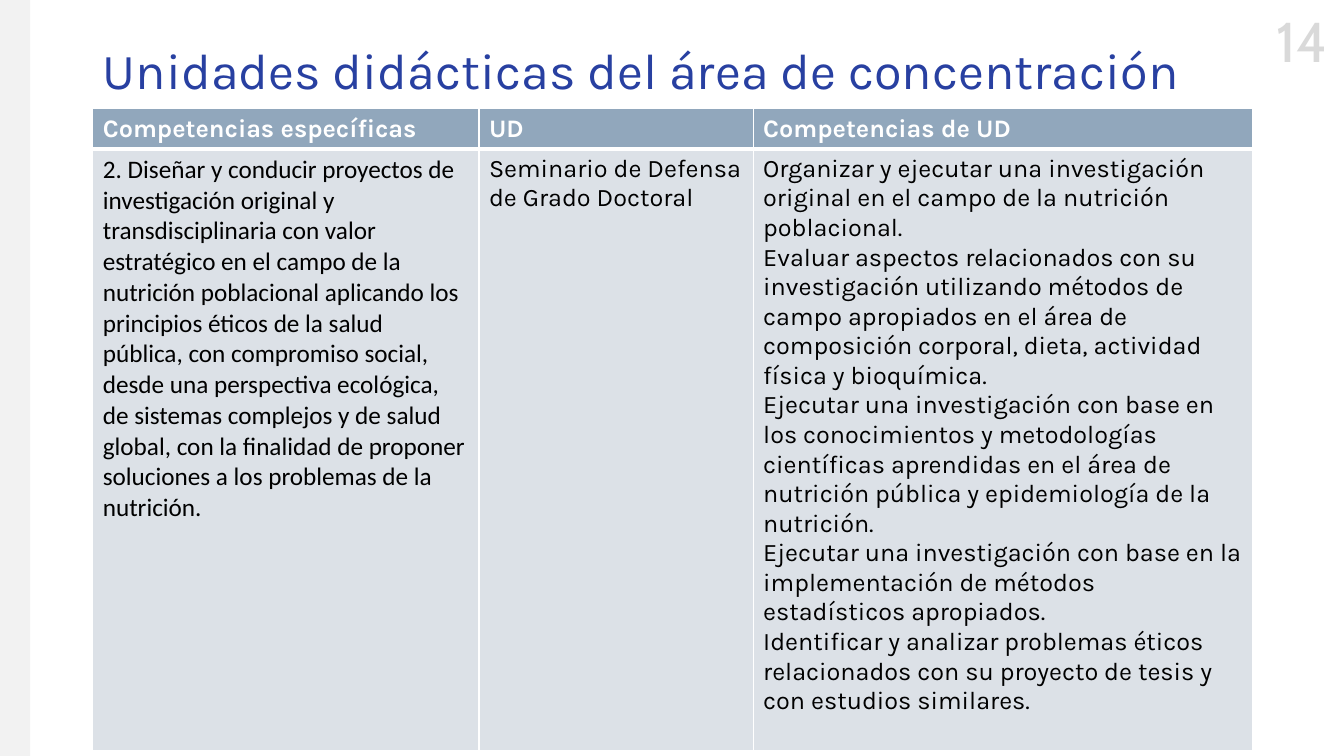
from dataclasses import dataclass

from lxml.etree import SubElement
from pptx import Presentation
from pptx.dml.color import RGBColor
from pptx.enum.shapes import MSO_SHAPE
from pptx.enum.text import MSO_ANCHOR, MSO_AUTO_SIZE, PP_ALIGN
from pptx.oxml.ns import qn
from pptx.util import Inches, Pt


@dataclass
class Column:
    heading: str
    width: float
    paragraphs: list[str]
    font: str = "Karla"


COLUMNS = [
    Column("Competencias específicas", 3.83, [
        "2. Diseñar y conducir proyectos de investigación original y "
        "transdisciplinaria con valor estratégico en el campo de la nutrición "
        "poblacional aplicando los principios éticos de la salud pública, con "
        "compromiso social, desde una perspectiva ecológica, de sistemas complejos "
        "y de salud global, con la finalidad de proponer soluciones a los problemas "
        "de la nutrición.",
    ], "Calibri"),
    Column("UD", 2.72, ["Seminario de Defensa de Grado Doctoral"]),
    Column("Competencias de UD", 4.95, [
        "Organizar y ejecutar una investigación original en el campo de la "
        "nutrición poblacional.",
        "Evaluar aspectos relacionados con su investigación utilizando métodos de "
        "campo apropiados en el área de composición corporal, dieta, actividad "
        "física y bioquímica.",
        "Ejecutar una investigación con base en los conocimientos y metodologías "
        "científicas aprendidas en el área de nutrición pública y epidemiología de "
        "la nutrición.",
        "Ejecutar una investigación con base en la implementación de métodos "
        "estadísticos apropiados.",
        "Identificar y analizar problemas éticos relacionados con su proyecto de "
        "tesis y con estudios similares.",
    ]),
]
ROW_HEIGHTS = [0.38, 5.97]


def paint(fill, color: str) -> None:
    fill.solid()
    fill.fore_color.rgb = RGBColor.from_string(color)


def write(frame, paragraphs: list[str], *, font: str, size: float, color: str,
          bold: bool = False, align=PP_ALIGN.LEFT, line_spacing: float = 1.0) -> None:
    for index, text in enumerate(paragraphs):
        paragraph = frame.add_paragraph() if index else frame.paragraphs[0]
        paragraph.alignment = align
        paragraph.line_spacing = line_spacing
        run = paragraph.add_run()
        run.text = text
        run.font.name = font
        run.font.size = Pt(size)
        run.font.bold = bold
        run.font.color.rgb = RGBColor.from_string(color)


def format_cell(cell, fill: str, top: float, bottom: float) -> None:
    """Give the cell white borders, then its fill, in schema order."""
    properties = cell._tc.get_or_add_tcPr()
    for side, width in {"lnL": 1, "lnR": 1, "lnT": top, "lnB": bottom}.items():
        line = SubElement(properties, qn(f"a:{side}"), w=str(Pt(width)))
        solid = SubElement(line, qn("a:solidFill"))
        SubElement(solid, qn("a:srgbClr"), val="FFFFFF")
    paint(cell.fill, fill)


def add_side_band(slide) -> None:
    band = slide.shapes.add_shape(MSO_SHAPE.RECTANGLE, 0, 0, Inches(0.3), Inches(7.5))
    band.shadow.inherit = False
    paint(band.fill, "F2F2F2")
    band.line.fill.background()


def add_page_number(slide) -> None:
    number = slide.shapes.add_textbox(Inches(12.54), Inches(0.02), Inches(0.75), Inches(0.77))
    number.text_frame.word_wrap = False
    number.text_frame.auto_size = MSO_AUTO_SIZE.SHAPE_TO_FIT_TEXT
    write(number.text_frame, ["14"], font="Cabin", size=40, color="D9D9D9",
          align=PP_ALIGN.CENTER)


def fill_title(slide) -> None:
    title = slide.shapes.title
    title.left, title.top = Inches(0.92), Inches(0.4)
    title.width, title.height = Inches(11.5), Inches(0.66)
    title.text_frame.vertical_anchor = MSO_ANCHOR.MIDDLE
    title.text_frame.auto_size = MSO_AUTO_SIZE.NONE
    write(title.text_frame, ["Unidades didácticas del área de concentración"],
          font="Karla", size=36, color="2840A1", line_spacing=0.9)


def add_competences(slide) -> None:
    table = slide.shapes.add_table(
        len(ROW_HEIGHTS), len(COLUMNS), Inches(0.92), Inches(1.08),
        Inches(11.5), Inches(sum(ROW_HEIGHTS))).table
    for row, height in zip(table.rows, ROW_HEIGHTS):
        row.height = Inches(height)
    for index, column in enumerate(COLUMNS):
        table.columns[index].width = Inches(column.width)
        heading, body = table.cell(0, index), table.cell(1, index)
        format_cell(heading, "91A7BC", top=1, bottom=3)
        format_cell(body, "DCE1E7", top=3, bottom=1)
        write(heading.text_frame, [column.heading], font="Karla", size=18,
              color="FFFFFF", bold=True)
        write(body.text_frame, column.paragraphs, font=column.font, size=18,
              color="000000")


def main() -> None:
    deck = Presentation()
    deck.slide_width, deck.slide_height = Inches(13.33), Inches(7.5)
    slide = deck.slides.add_slide(deck.slide_layouts[5])
    add_page_number(slide)
    add_side_band(slide)
    fill_title(slide)
    add_competences(slide)
    deck.save("out.pptx")


if __name__ == "__main__":
    main()
